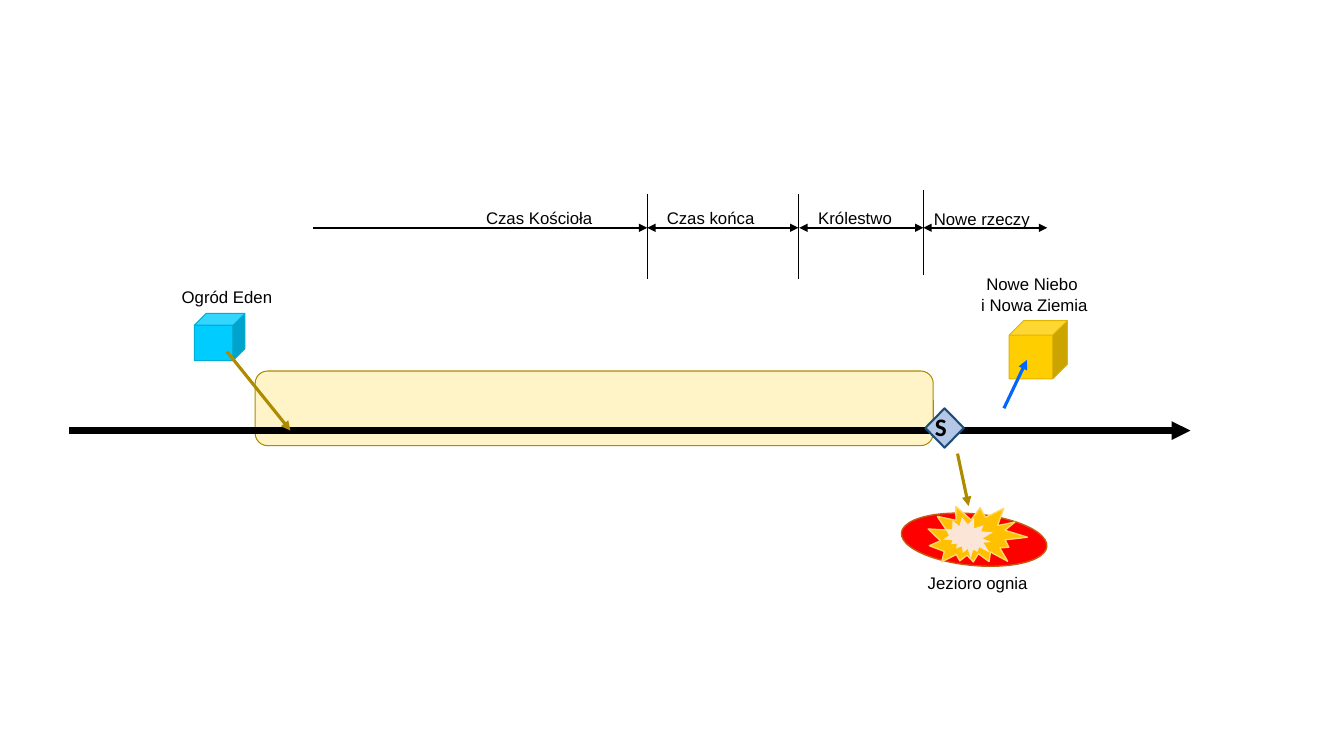
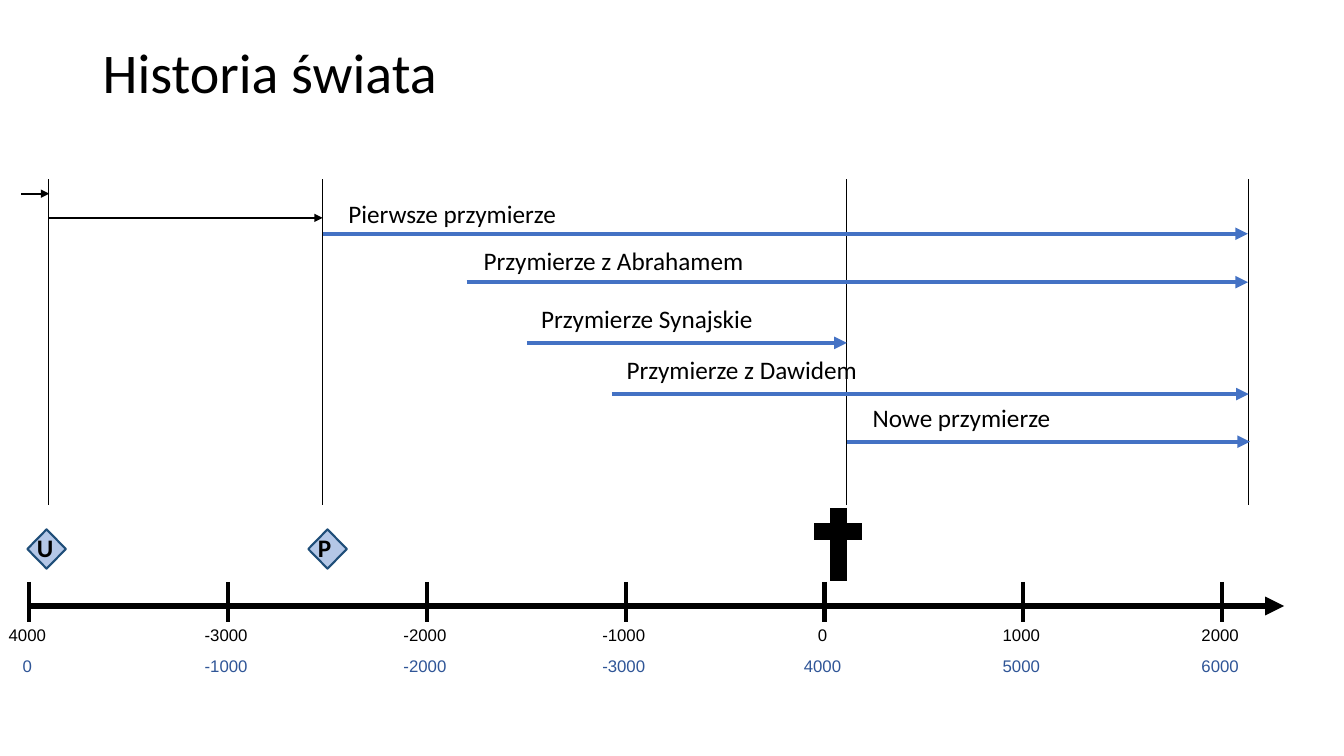
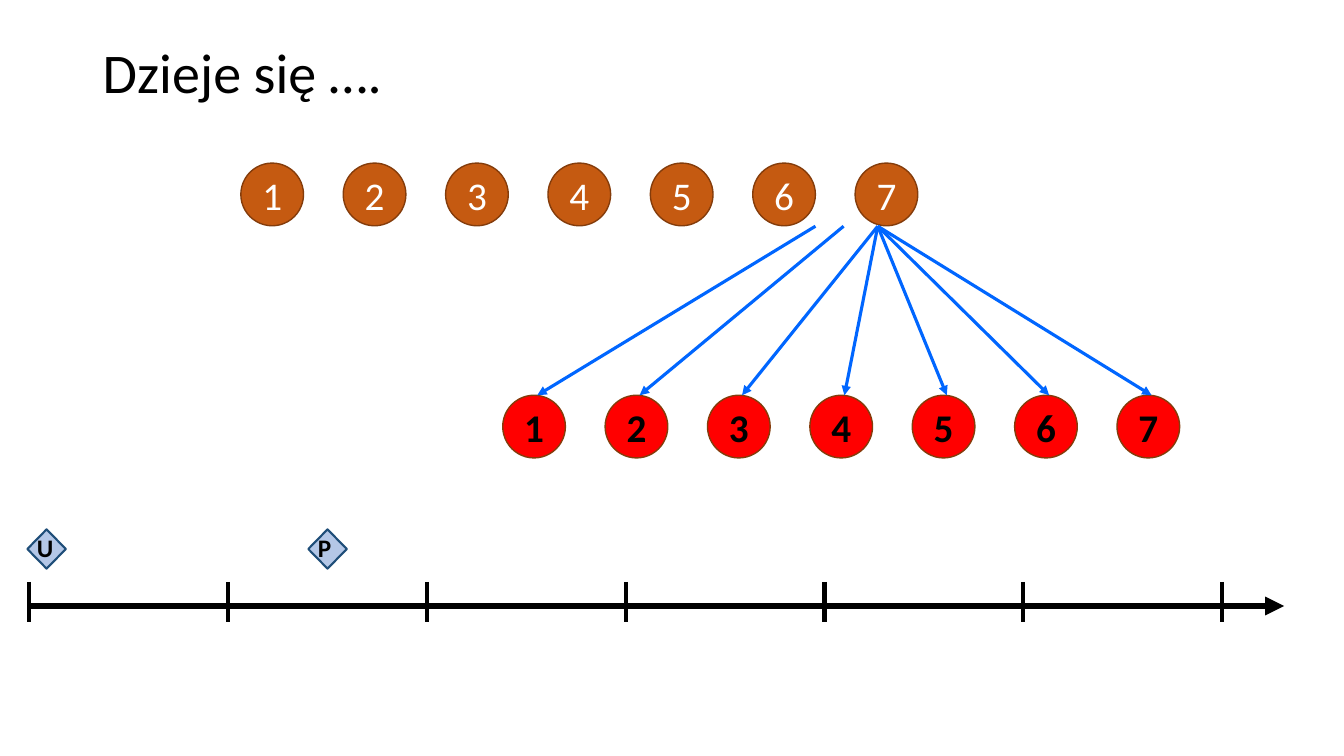
from lxml import etree
from pptx import Presentation
from pptx.dml.color import RGBColor
from pptx.enum.shapes import MSO_CONNECTOR, MSO_SHAPE
from pptx.enum.text import MSO_ANCHOR, PP_ALIGN
from pptx.oxml.ns import qn
from pptx.util import Cm, Pt

STRAIGHT = MSO_CONNECTOR.STRAIGHT
ROUNDED = MSO_SHAPE.ROUNDED_RECTANGLE
DIAMOND = MSO_SHAPE.DIAMOND
OVAL = MSO_SHAPE.OVAL
LAKE = MSO_SHAPE.FLOWCHART_CONNECTOR
FLAME = MSO_SHAPE.EXPLOSION2
CUBE = MSO_SHAPE.CUBE
TOP, MIDDLE = MSO_ANCHOR.TOP, MSO_ANCHOR.MIDDLE
LEFT, CENTER = PP_ALIGN.LEFT, PP_ALIGN.CENTER

COLORS = {
    "black": "000000",
    "white": "FFFFFF",
    "cream": "FFF4C7",
    "olive": "AD8B00",
    "pale blue": "B4C7E7",
    "navy": "1F4E79",
    "dark blue": "2F5597",
    "blue": "4472C4",
    "bright blue": "0066FF",
    "cyan": "00CCFF",
    "teal": "00AED8",
    "red": "FF0000",
    "rust": "C55A11",
    "brown": "843C0B",
    "orange": "FFC000",
    "yellow": "FFD966",
    "peach": "FBE5D6",
    "gold": "FFCE00",
    "dark gold": "E0B400",
}


class Deck:
    def __init__(self):
        self.presentation = Presentation()
        self.presentation.slide_width = Cm(33.87)
        self.presentation.slide_height = Cm(19.05)
        self.slide = None

    def color(self, name):
        return RGBColor.from_string(COLORS[name])

    def new_slide(self, title=None):
        layout = self.presentation.slide_layouts[6]
        self.slide = self.presentation.slides.add_slide(layout)
        if title:
            self.text(title, 2.34, 1.02, 29.21, 1.98, size=40, spacing=0.9)

    def set_text(self, shape, text, size, color="black", font="Calibri", bold=False,
                 align=LEFT, anchor=TOP, insets=(0.25, 0.13), spacing=1.0):
        frame = shape.text_frame
        frame.text = text
        frame.word_wrap = True
        frame.vertical_anchor = anchor
        frame.margin_left = frame.margin_right = Cm(insets[0])
        frame.margin_top = frame.margin_bottom = Cm(insets[1])
        for paragraph in frame.paragraphs:
            paragraph.alignment = align
            paragraph.line_spacing = spacing
            for run in paragraph.runs:
                run.font.size = Pt(size)
                run.font.name = font
                run.font.bold = bold
                run.font.color.rgb = self.color(color)

    def text(self, text, left, top, width, height, **style):
        box = self.slide.shapes.add_textbox(Cm(left), Cm(top), Cm(width), Cm(height))
        self.set_text(box, text, **style)

    def caption(self, text, left, top, width=3.66, height=0.66, color="black"):
        self.text(text, left, top, width, height, size=12, color=color, font="Arial",
                  align=CENTER, anchor=MIDDLE, insets=(0.08, 0.08))

    def shape(self, kind, left, top, width, height, fill, outline=None,
              weight=0.75, rotation=0):
        shape = self.slide.shapes.add_shape(kind, Cm(left), Cm(top), Cm(width), Cm(height))
        shape.shadow.inherit = False
        shape.rotation = rotation
        shape.fill.solid()
        shape.fill.fore_color.rgb = self.color(fill)
        if outline:
            shape.line.color.rgb = self.color(outline)
            shape.line.width = Pt(weight)
        else:
            shape.line.fill.background()
        return shape

    def line(self, x1, y1, x2, y2, weight=1.5, color="black", heads=()):
        line = self.slide.shapes.add_connector(STRAIGHT, Cm(x1), Cm(y1), Cm(x2), Cm(y2))
        line.line.color.rgb = self.color(color)
        line.line.width = Pt(weight)
        properties = line.element.spPr
        outline = properties.find(qn("a:ln"))
        for end in heads:
            etree.SubElement(outline, qn(f"a:{end}"), type="triangle")
        etree.SubElement(properties, qn("a:effectLst"))

    def arrow(self, x1, y1, x2, y2, weight=1.5, color="black"):
        self.line(x1, y1, x2, y2, weight, color, heads=("tailEnd",))

    def marker(self, letter, left, top):
        diamond = self.shape(DIAMOND, left, top, 0.97, 0.99, "pale blue", "navy", 1.5)
        self.set_text(diamond, letter, 18, bold=True, anchor=MIDDLE,
                      insets=(0, 0.1), spacing=0.9)

    def circles(self, left, top, fill, text_color, bold):
        for index in range(7):
            circle = self.shape(OVAL, left + index * 2.58, top, 1.58, 1.58,
                                fill, "brown", 1)
            self.set_text(circle, str(index + 1), 28, text_color, bold=bold,
                          align=CENTER, anchor=MIDDLE)

    def time_axis(self, label_rows=()):
        for index in range(7):
            x = 0.74 + index * 5.01
            self.line(x, 14.66, x, 15.67, 3)
            for top, color, labels in label_rows:
                self.caption(labels[index], x - 0.7, top, width=1.3, color=color)
        self.arrow(0.76, 15.27, 32.36, 15.27, 4.5)
        self.marker("U", 0.69, 13.34)
        self.marker("P", 7.77, 13.34)


def build_ages(deck):
    deck.new_slide()
    deck.shape(ROUNDED, 6.43, 9.35, 17.09, 1.88, "cream", "olive")
    deck.arrow(1.75, 10.85, 30, 10.85, 4.5)

    deck.arrow(7.9, 5.74, 16.31, 5.74)
    for start, end in ((16.31, 20.12), (20.14, 23.27), (23.27, 26.39)):
        deck.line(start, 5.74, end, 5.74, heads=("headEnd", "tailEnd"))
    for x, top in ((16.31, 4.88), (20.12, 4.88), (23.27, 4.78)):
        deck.line(x, top, x, top + 2.16, 0.5)
    for name, left, top, width in (
        ("Czas Kościoła", 11.76, 5.16, 3.66),
        ("Czas końca", 16.46, 5.16, 2.9),
        ("Królestwo", 20.37, 5.16, 2.36),
        ("Nowe rzeczy", 23.27, 5.18, 2.95),
    ):
        deck.caption(name, left, top, width)

    deck.marker("S", 23.32, 10.29)
    deck.arrow(24.13, 11.43, 24.41, 12.75, 2.25, "olive")
    deck.shape(LAKE, 22.71, 12.95, 3.68, 1.3, "red", "rust", 1, rotation=5.4)
    deck.shape(FLAME, 23.39, 12.65, 2.46, 1.73, "orange", "yellow", 1, rotation=16.2)
    deck.shape(FLAME, 23.83, 12.98, 1.19, 1.14, "peach", rotation=56.2)
    deck.caption("Jezioro ognia", 22.81, 14.35)

    deck.shape(CUBE, 25.43, 8.08, 1.47, 1.47, "gold", "dark gold")
    deck.arrow(25.3, 10.29, 25.88, 9.07, 2.25, "bright blue")
    deck.caption("Nowe Niebo\v i Nowa Ziemia", 24.18, 6.83, height=1.17)

    deck.shape(CUBE, 4.9, 7.9, 1.27, 1.19, "cyan", "teal")
    deck.arrow(5.72, 8.86, 7.32, 10.85, 2.25, "olive")
    deck.caption("Ogród Eden", 3.89, 7.16)


def build_covenants(deck):
    deck.new_slide("Historia świata")
    deck.time_axis((
        (15.67, "black", ("4000", "-3000", "-2000", "-1000", "0", "1000", "2000")),
        (16.46, "dark blue", ("0", "-1000", "-2000", "-3000", "4000", "5000", "6000")),
    ))
    deck.line(20.52, 13.39, 21.72, 13.39, 12)
    deck.line(21.13, 12.8, 21.13, 14.63, 12)

    for x in (1.22, 8.13, 21.34, 31.45):
        deck.line(x, 4.52, x, 12.73, 0.5)
    deck.arrow(0.53, 4.88, 1.24, 4.88)
    deck.arrow(1.22, 5.49, 8.13, 5.49)
    for name, left, top, start, end, y in (
        ("Pierwsze przymierze", 8.53, 4.88, 8.13, 31.45, 5.89),
        ("Przymierze z Abrahamem", 11.94, 6.05, 11.76, 31.45, 7.11),
        ("Przymierze Synajskie", 13.39, 7.52, 13.28, 21.34, 8.64),
        ("Przymierze z Dawidem", 15.54, 8.81, 15.42, 31.47, 9.93),
        ("Nowe przymierze", 21.74, 10.01, 21.34, 31.5, 11.13),
    ):
        deck.arrow(start, y, end, y, 3, "blue")
        deck.text(name, left, top, 7.2, 1.02, size=18)


def build_events(deck):
    deck.new_slide("Dzieje się ….")
    deck.time_axis()
    deck.circles(6.07, 4.11, "rust", "white", False)
    deck.circles(12.67, 9.96, "red", "black", True)
    for index, start in enumerate([20.55, 21.26] + [22.12] * 5):
        deck.arrow(start, 5.7, 13.54 + index * 2.58, 9.96, 2.25, "bright blue")


def main():
    deck = Deck()
    build_ages(deck)
    build_covenants(deck)
    build_events(deck)
    deck.presentation.save("out.pptx")


if __name__ == "__main__":
    main()
